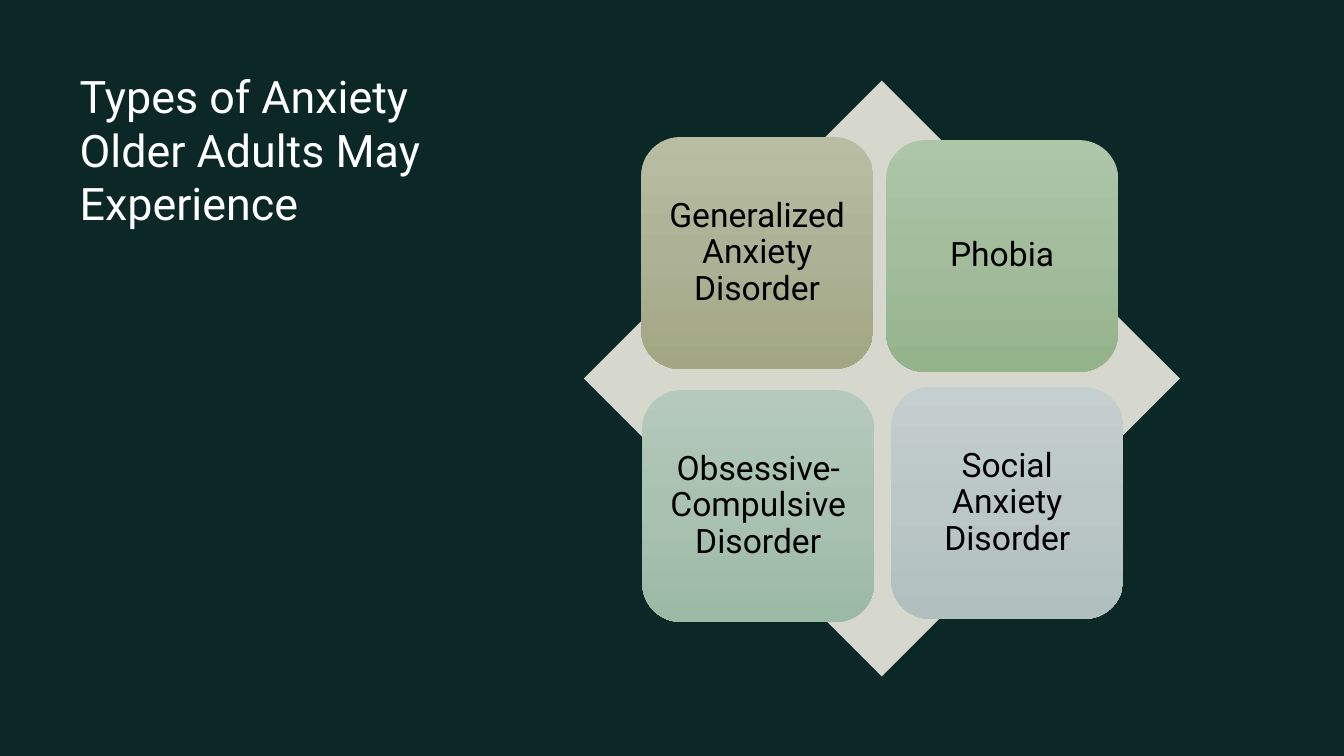
from copy import deepcopy
from dataclasses import dataclass

from pptx import Presentation
from pptx import util as u
from pptx.dml.color import RGBColor
from pptx.enum import shapes, text
from pptx.oxml.ns import qn


@dataclass(frozen=True)
class Theme:
    font: str = "Roboto"
    back: str = "0B2827"
    gem: str = "D6D8CE"
    light: str = "FFFFFF"
    dark: str = "000000"
    head: int = 32
    body: int = 24


@dataclass(frozen=True)
class Box:
    """A frame in percent of the slide's width and height."""
    left: float
    top: float
    wide: float
    high: float

    def place(self) -> tuple[int, int, int, int]:
        return (int(WIDE * self.left / 100), int(HIGH * self.top / 100),
                int(WIDE * self.wide / 100), int(HIGH * self.high / 100))


@dataclass(frozen=True)
class Tile:
    label: str
    left: float
    top: float
    fade: tuple[str, str, str]


THEME = Theme()
WIDE, HIGH = u.Inches(13.33), u.Inches(7.5)
TILE_WIDE, TILE_HIGH = 17.25, 30.67
TITLE = Box(5.93, 9.07, 25.51, 80.4)
GEM = Box(43.44, 10.67, 44.34, 78.8)
TILES = (
    Tile("Generalized Anxiety Disorder", 47.71, 18.13, ("B9BDA2", "ADB196", "A2A782")),
    Tile("Phobia", 65.94, 18.53, ("AEC6A8", "A2BC9C", "93B38A")),
    Tile("Obsessive-Compulsive Disorder", 47.79, 51.6, ("B5CABC", "A9C1B1", "9BBAA5")),
    Tile("Social Anxiety Disorder", 66.32, 51.2, ("C6CFCF", "BBC6C6", "B1BFBF")),
)


def write(shape, words: str, *, size: int, color: str, inset: float = 0,
          align=text.PP_ALIGN.LEFT, anchor=text.MSO_ANCHOR.TOP,
          lead: float = 1.0) -> None:
    frame = shape.text_frame
    frame.word_wrap = True
    frame.vertical_anchor = anchor
    frame.margin_left = frame.margin_right = u.Inches(inset)
    frame.margin_top = frame.margin_bottom = u.Inches(inset)
    line = frame.paragraphs[0]
    line.alignment, line.line_spacing = align, lead
    run = line.add_run()
    run.text = words
    run.font.name, run.font.size = THEME.font, u.Pt(size)
    run.font.color.rgb = RGBColor.from_string(color)


def add_form(slide, kind: shapes.MSO_SHAPE, box: Box):
    form = slide.shapes.add_shape(kind, *box.place())
    form.shadow.inherit = False
    form.line.fill.background()
    return form


def paint(form, fade: tuple[str, str, str]) -> None:
    """Fill with a three-stop gradient running from top to bottom."""
    form.fill.gradient()
    form.fill.gradient_angle = 270
    first = next(form.element.spPr.iter(qn("a:gs")))
    first.addnext(deepcopy(first))
    for stop, color, share in zip(form.fill.gradient_stops, fade, (0, 0.5, 1)):
        stop.color.rgb = RGBColor.from_string(color)
        stop.position = share


def add_tile(slide, tile: Tile) -> None:
    box = Box(tile.left, tile.top, TILE_WIDE, TILE_HIGH)
    form = add_form(slide, shapes.MSO_SHAPE.ROUNDED_RECTANGLE, box)
    paint(form, tile.fade)
    write(form, tile.label, size=THEME.body, color=THEME.dark, inset=0.1,
          align=text.PP_ALIGN.CENTER, anchor=text.MSO_ANCHOR.MIDDLE, lead=0.9)


def main() -> None:
    deck = Presentation()
    deck.slide_width, deck.slide_height = WIDE, HIGH
    slide = deck.slides.add_slide(deck.slide_layouts[6])
    slide.background.fill.solid()
    slide.background.fill.fore_color.rgb = RGBColor.from_string(THEME.back)

    title = slide.shapes.add_textbox(*TITLE.place())
    write(title, "Types of Anxiety Older Adults May Experience",
          size=THEME.head, color=THEME.light)

    gem = add_form(slide, shapes.MSO_SHAPE.DIAMOND, GEM)
    gem.fill.solid()
    gem.fill.fore_color.rgb = RGBColor.from_string(THEME.gem)
    for tile in TILES:
        add_tile(slide, tile)
    deck.save("out.pptx")


if __name__ == "__main__":
    main()
